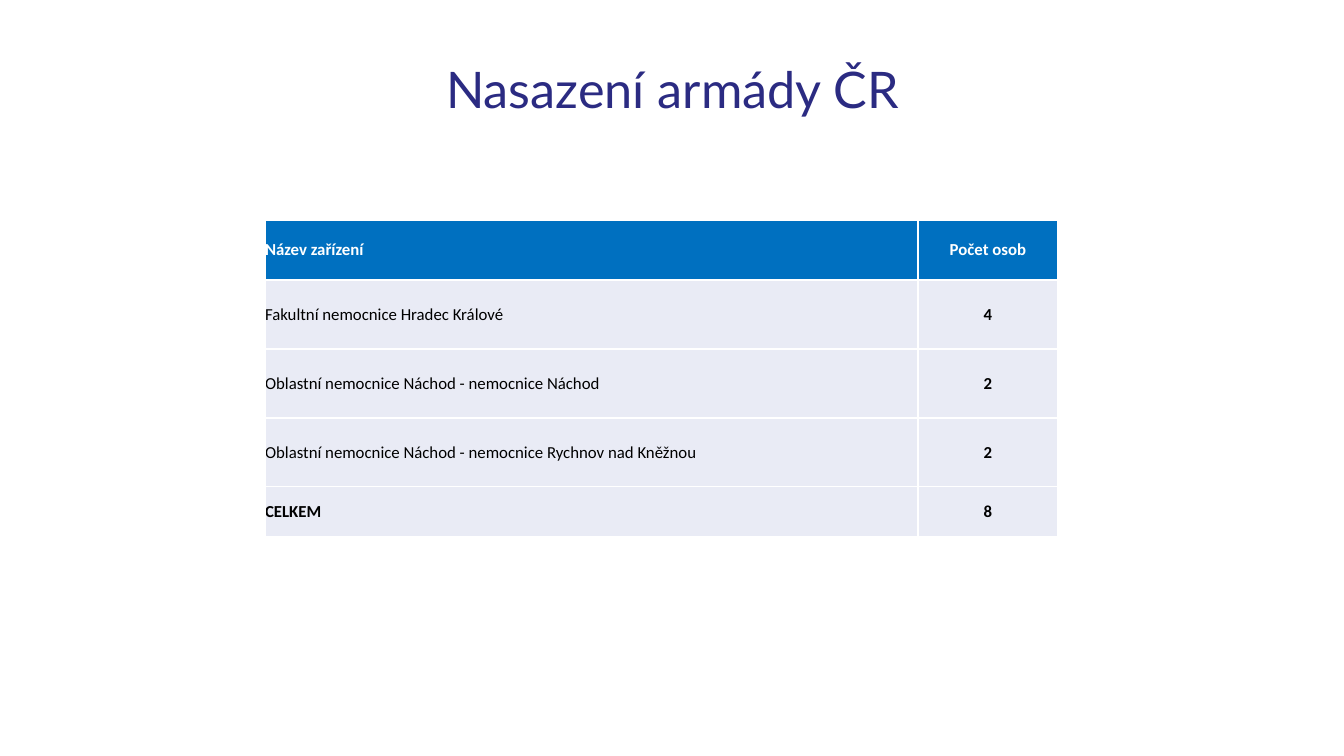
from dataclasses import dataclass

import pptx
import pptx.dml.color
import pptx.enum.text
import pptx.oxml
import pptx.oxml.ns
import pptx.util

TITLE = "Nasazení armády ČR"
HEADER = ("Název zařízení", "Počet osob")
FACILITIES = [
    ("Fakultní nemocnice Hradec Králové", 4),
    ("Oblastní nemocnice Náchod - nemocnice Náchod", 2),
    ("Oblastní nemocnice Náchod - nemocnice Rychnov nad Kněžnou", 2),
]
TOTAL = ("CELKEM", sum(count for _, count in FACILITIES))

SLIDE_SIZE = (1344, 756)
TITLE_BOX = (93, 40, 1159, 105)
TABLE_ORIGIN = (265, 220)
COLUMN_WIDTHS = (653, 140)
HEADER_HEIGHT, FACILITY_HEIGHT, TOTAL_HEIGHT = 60, 69, 50


@dataclass(frozen=True)
class Theme:
    title_color: str = "2B2B82"
    header_fill: str = "0070C0"
    header_text: str = "FFFFFF"
    body_fill: str = "E9EBF5"
    body_text: str = "000000"
    border: str = "FFFFFF"
    title_font: str = "Lato"
    table_font: str = "Calibri"
    title_size: int = 36
    table_size: int = 12
    border_width: int = 1


THEME = Theme()
ALIGN = pptx.enum.text.PP_ALIGN
MIDDLE = pptx.enum.text.MSO_ANCHOR.MIDDLE


def px(length):
    return pptx.util.Emu(round(length * 914400 / 100.8))


def rgb(color):
    return pptx.dml.color.RGBColor.from_string(color)


def style(paragraph, font, size, color, align, bold=False):
    paragraph.alignment = align
    for run in paragraph.runs:
        run.font.name = font
        run.font.size = pptx.util.Pt(size)
        run.font.color.rgb = rgb(color)
        run.font.bold = bold


def add_borders(cell):
    properties = cell._tc.get_or_add_tcPr()
    width = pptx.util.Pt(THEME.border_width)
    for index, side in enumerate(("lnL", "lnR", "lnT", "lnB")):
        properties.insert(index, pptx.oxml.parse_xml(
            f'<a:{side} {pptx.oxml.ns.nsdecls("a")} w="{width}"><a:solidFill>'
            f'<a:srgbClr val="{THEME.border}"/></a:solidFill></a:{side}>'))


def add_title(slide):
    frame = slide.shapes.add_textbox(*map(px, TITLE_BOX)).text_frame
    frame.word_wrap = True
    frame.vertical_anchor = MIDDLE
    frame.text = TITLE
    heading = frame.paragraphs[0]
    heading.line_spacing = 0.9
    style(heading, THEME.title_font, THEME.title_size, THEME.title_color, ALIGN.CENTER)


def add_deployment(slide):
    rows = [HEADER, *FACILITIES, TOTAL]
    heights = [HEADER_HEIGHT, *[FACILITY_HEIGHT] * len(FACILITIES), TOTAL_HEIGHT]
    deployment = slide.shapes.add_table(
        len(rows), len(HEADER), *map(px, TABLE_ORIGIN),
        px(sum(COLUMN_WIDTHS)), px(sum(heights))).table
    for column, width in zip(deployment.columns, COLUMN_WIDTHS):
        column.width = px(width)
    for r, (row, height) in enumerate(zip(rows, heights)):
        deployment.rows[r].height = px(height)
        is_header = row is HEADER
        for c, value in enumerate(row):
            cell = deployment.cell(r, c)
            cell.margin_left = cell.margin_right = cell.margin_top = cell.margin_bottom = 0
            cell.vertical_anchor = MIDDLE
            cell.fill.solid()
            cell.fill.fore_color.rgb = rgb(THEME.header_fill if is_header else THEME.body_fill)
            add_borders(cell)
            cell.text_frame.text = str(value)
            style(cell.text_frame.paragraphs[0], THEME.table_font, THEME.table_size,
                  THEME.header_text if is_header else THEME.body_text,
                  ALIGN.CENTER if c else ALIGN.LEFT,
                  bold=c > 0 or row in (HEADER, TOTAL))


def main():
    deck = pptx.Presentation()
    deck.slide_width, deck.slide_height = map(px, SLIDE_SIZE)
    slide = deck.slides.add_slide(deck.slide_layouts[6])
    add_title(slide)
    add_deployment(slide)
    deck.save("out.pptx")


if __name__ == "__main__":
    main()
